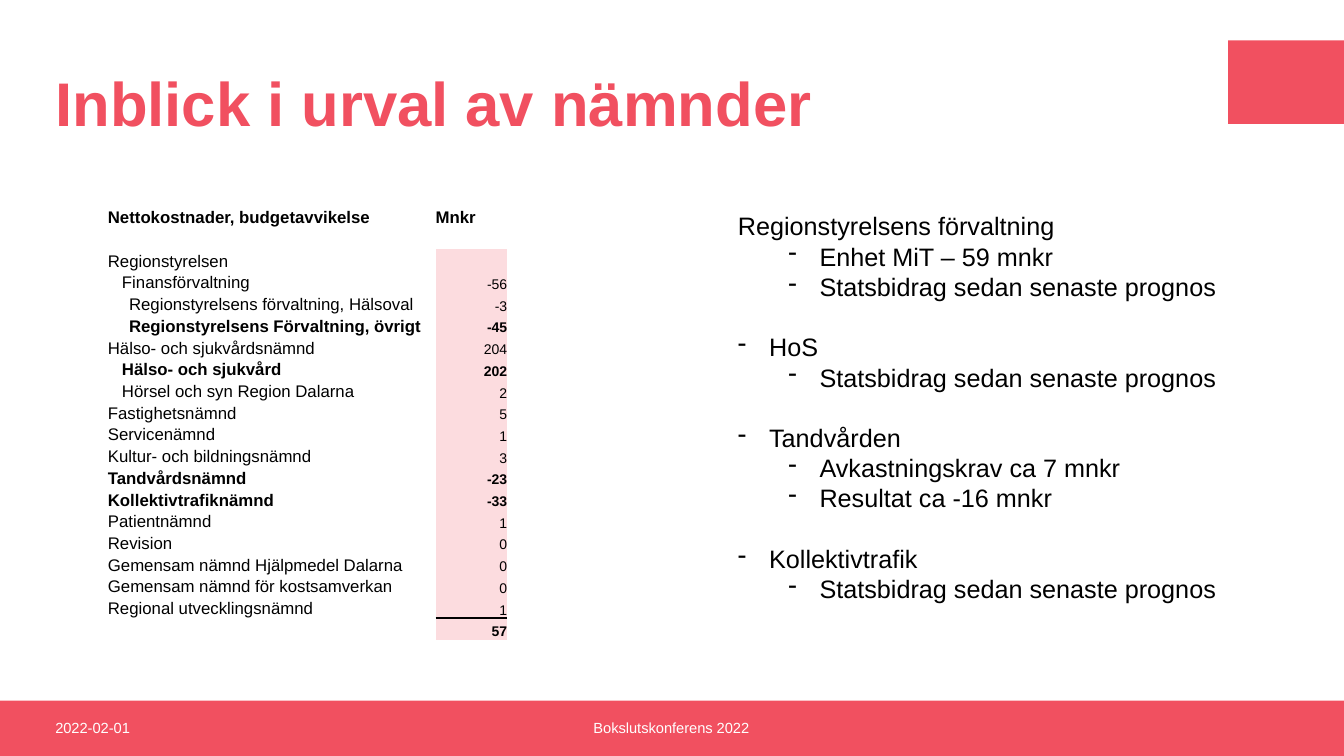
from dataclasses import dataclass

import pptx
import pptx.dml.color
import pptx.enum.shapes
import pptx.enum.text
import pptx.oxml
import pptx.oxml.ns
import pptx.util
from pptx.util import Inches

COLORS = {"coral": "F15060", "pink": "FCDCDF", "white": "FFFFFF", "black": "000000"}
FONT = "Arial"
ALIGN = pptx.enum.text.PP_ALIGN
ANCHOR = pptx.enum.text.MSO_ANCHOR


@dataclass
class Entry:
    name: str = ""
    value: str = ""
    indent: float = 0
    bold: bool = False


@dataclass
class Point:
    text: str
    level: int = 0
    bullet: bool = True
    gap: bool = False


@dataclass
class Bar:
    left: float
    top: float
    width: float
    height: float


@dataclass
class FooterText:
    text: str
    left: float
    width: float
    align: ALIGN


BARS = [Bar(0, 6.95, 13.33, 0.55), Bar(12.18, 0.4, 1.15, 0.83)]
FOOTERS = [
    FooterText("2022-02-01", 0.45, 3, ALIGN.LEFT),
    FooterText("Bokslutskonferens 2022", 3.91, 5.5, ALIGN.CENTER),
]
HEADER_ROWS = 2
ENTRIES = [
    Entry("Nettokostnader, budgetavvikelse", "Mnkr", bold=True),
    Entry(),
    Entry("Regionstyrelsen"),
    Entry("Finansförvaltning", "-56", 0.14),
    Entry("Regionstyrelsens förvaltning, Hälsoval", "-3", 0.21),
    Entry("Regionstyrelsens Förvaltning, övrigt", "-45", 0.21, True),
    Entry("Hälso- och sjukvårdsnämnd", "204"),
    Entry("Hälso- och sjukvård", "202", 0.14, True),
    Entry("Hörsel och syn Region Dalarna", "2", 0.14),
    Entry("Fastighetsnämnd", "5"),
    Entry("Servicenämnd", "1"),
    Entry("Kultur- och bildningsnämnd", "3"),
    Entry("Tandvårdsnämnd", "-23", bold=True),
    Entry("Kollektivtrafiknämnd", "-33", bold=True),
    Entry("Patientnämnd", "1"),
    Entry("Revision", "0"),
    Entry("Gemensam nämnd Hjälpmedel Dalarna", "0"),
    Entry("Gemensam nämnd för kostsamverkan", "0"),
    Entry("Regional utvecklingsnämnd", "1"),
    Entry("", "57", bold=True),
]
FORECAST = "Statsbidrag sedan senaste prognos"
POINTS = [
    Point("Regionstyrelsens förvaltning", bullet=False),
    Point("Enhet MiT – 59 mnkr", 1),
    Point(FORECAST, 1),
    Point("HoS", gap=True),
    Point(FORECAST, 1),
    Point("Tandvården", gap=True),
    Point("Avkastningskrav ca 7 mnkr", 1),
    Point("Resultat ca -16 mnkr", 1),
    Point("Kollektivtrafik", gap=True),
    Point(FORECAST, 1),
]


def rgb(name: str) -> pptx.dml.color.RGBColor:
    return pptx.dml.color.RGBColor.from_string(COLORS[name])


def add_run(p, text: str, size: float, color: str = "black", bold: bool = False) -> None:
    r = p.add_run()
    r.text = text
    r.font.name = FONT
    r.font.size = pptx.util.Pt(size)
    r.font.bold = bold
    r.font.color.rgb = rgb(color)


def add_bar(slide, bar: Bar) -> None:
    sp = slide.shapes.add_shape(
        pptx.enum.shapes.MSO_SHAPE.RECTANGLE,
        Inches(bar.left), Inches(bar.top), Inches(bar.width), Inches(bar.height))
    sp.shadow.inherit = False
    sp.fill.solid()
    sp.fill.fore_color.rgb = rgb("coral")
    sp.line.fill.background()


def add_footer(slide, footer: FooterText) -> None:
    sp = slide.shapes.add_textbox(
        Inches(footer.left), Inches(6.95), Inches(footer.width), Inches(0.54))
    tf = sp.text_frame
    tf.word_wrap = True
    tf.vertical_anchor = ANCHOR.MIDDLE
    p = tf.paragraphs[0]
    p.alignment = footer.align
    add_run(p, footer.text, 10.5, "white")


def set_title(slide, text: str) -> None:
    sp = slide.shapes.title
    sp.left, sp.top, sp.width, sp.height = Inches(0.45), Inches(0.4), Inches(11.61), Inches(1.32)
    tf = sp.text_frame
    tf.vertical_anchor = ANCHOR.MIDDLE
    p = tf.paragraphs[0]
    p.alignment = ALIGN.LEFT
    p.line_spacing = 0.9
    add_run(p, text, 44, "coral", True)


def fill_cell(cell, text: str, size: float, bold: bool, indent: float,
              fill: str, align: ALIGN) -> None:
    cell.margin_left = Inches(indent)
    cell.margin_top = cell.margin_right = cell.margin_bottom = 0
    cell.vertical_anchor = ANCHOR.BOTTOM
    cell.fill.solid()
    cell.fill.fore_color.rgb = rgb(fill)
    p = cell.text_frame.paragraphs[0]
    p.alignment = align
    if text:
        add_run(p, text, size, bold=bold)
    else:  # keeps an empty row from growing
        end = pptx.oxml.ns.qn("a:endParaRPr")
        p._p.append(p._p.makeelement(end, {"sz": str(size * 100)}))


def add_border(cell, side: str) -> None:
    cell._tc.get_or_add_tcPr().insert(0, pptx.oxml.parse_xml(
        f'<a:{side} {pptx.oxml.ns.nsdecls("a")} w="12700"><a:solidFill>'
        f'<a:srgbClr val="{COLORS["black"]}"/></a:solidFill></a:{side}>'))


def add_budget_table(slide, entries: list[Entry]) -> None:
    frame = slide.shapes.add_table(
        len(entries), 2, Inches(1.07), Inches(2.04), Inches(3.96), Inches(4.31))
    table = frame.table
    table.first_row = table.horz_banding = False
    style = table._tbl.tblPr.find(pptx.oxml.ns.qn("a:tableStyleId"))
    style.text = "{2D5ABB26-0587-4C30-8999-92F81FD0307C}"  # no style, no grid
    table.columns[0].width, table.columns[1].width = Inches(3.25), Inches(0.71)
    for i, entry in enumerate(entries):
        name, value = table.rows[i].cells
        fill_cell(name, entry.name, 12, entry.bold, entry.indent, "white", ALIGN.LEFT)
        if i < HEADER_ROWS:
            fill_cell(value, entry.value, 12, True, 0, "white", ALIGN.LEFT)
        else:
            fill_cell(value, entry.value, 10, entry.bold, 0, "pink", ALIGN.RIGHT)
    # Rule above the total
    add_border(table.cell(len(entries) - 2, 1), "lnB")
    add_border(table.cell(len(entries) - 1, 1), "lnT")


def add_points(slide, points: list[Point]) -> None:
    sp = slide.shapes.add_textbox(Inches(7.22), Inches(2.04), Inches(4.99), Inches(5.45))
    tf = sp.text_frame
    tf.word_wrap = False
    for i, point in enumerate(points):
        p = tf.paragraphs[0] if i == 0 else tf.add_paragraph()
        p.level = point.level
        if point.gap:
            p.space_before = pptx.util.Pt(21.6)
        if point.bullet:
            pPr = p._p.get_or_add_pPr()
            pPr.set("marL", str(Inches(0.31 + 0.5 * point.level)))
            pPr.set("indent", str(Inches(-0.31)))
            pPr.append(pptx.oxml.parse_xml(
                f'<a:buChar {pptx.oxml.ns.nsdecls("a")} char="-"/>'))
        add_run(p, point.text, 18)


def main() -> None:
    prs = pptx.Presentation()
    prs.slide_width, prs.slide_height = Inches(13.33), Inches(7.5)
    slide = prs.slides.add_slide(prs.slide_layouts[5])
    for bar in BARS:
        add_bar(slide, bar)
    set_title(slide, "Inblick i urval av nämnder")
    for footer in FOOTERS:
        add_footer(slide, footer)
    add_budget_table(slide, ENTRIES)
    add_points(slide, POINTS)
    prs.save("out.pptx")


if __name__ == "__main__":
    main()
